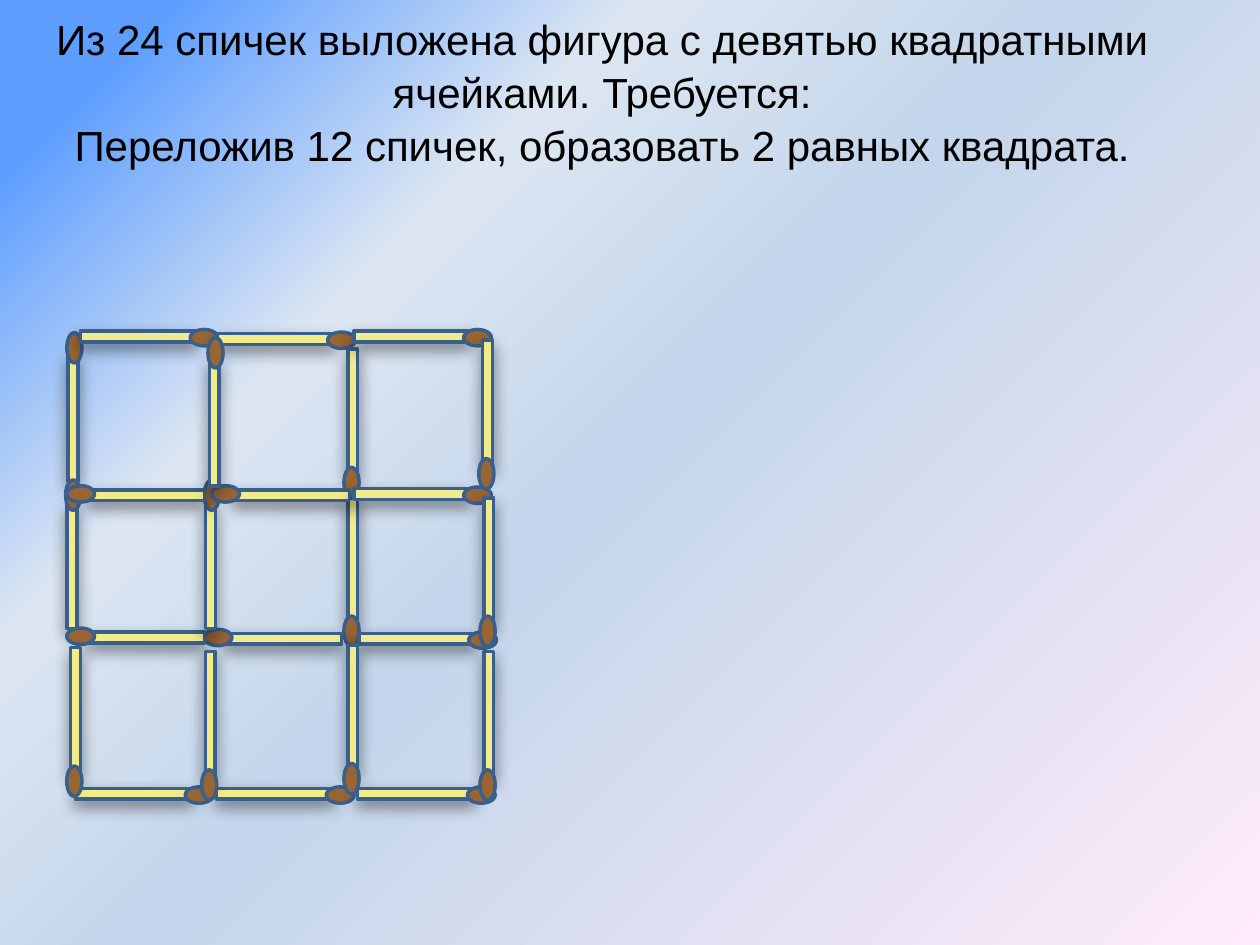
from typing import NamedTuple

from lxml import etree
from pptx import Presentation
from pptx import util as u
from pptx.dml.color import RGBColor
from pptx.enum import shapes, text
from pptx.oxml import parse_xml
from pptx.oxml.ns import nsdecls, qn

WOOD = RGBColor(0xF1, 0xEC, 0x8B)
HEAD = RGBColor(0x99, 0x66, 0x33)
OUTLINE = RGBColor(0x3A, 0x5F, 0x8C)
BLACK = RGBColor(0, 0, 0)
BACKDROP = [
    (8, RGBColor(0x5E, 0x9E, 0xFF)),
    (29, RGBColor(0xDC, 0xE6, 0xF2)),
    (49, RGBColor(0xC4, 0xD6, 0xEB)),
    (100, RGBColor(0xFF, 0xEB, 0xFA)),
]


class Match(NamedTuple):
    """Centre of the stick, in inches, and where the head points."""
    x: float
    y: float
    turn: int


class Style(NamedTuple):
    """Sizes of stick and head, and the head's offset from the stick's centre."""
    stick: tuple[float, float]
    head: tuple[float, float]
    offset: tuple[float, float]


LEFT, UP, RIGHT, DOWN = 0, 90, 180, 270
FLAT_STICK, FLAT_HEAD = (1.26, 0.36), (0.22, 0.13)
TALL_STICK, TALL_HEAD = (1.36, 0.33), (0.24, 0.12)
STYLES = {
    LEFT: Style(FLAT_STICK, FLAT_HEAD, (-0.52, -0.01)),
    UP: Style(TALL_STICK, TALL_HEAD, (0.01, -0.56)),
    RIGHT: Style(FLAT_STICK, FLAT_HEAD, (0.52, 0.01)),
    DOWN: Style(TALL_STICK, TALL_HEAD, (-0.01, 0.56)),
}

# Hand-laid matches, from back to front
MATCHES = [
    Match(0.58, 3.32, UP), Match(1.10, 2.67, RIGHT), Match(0.57, 4.49, UP),
    Match(2.19, 2.69, RIGHT), Match(2.80, 3.27, DOWN), Match(2.80, 4.45, DOWN),
    Match(2.25, 5.07, LEFT), Match(1.16, 5.06, LEFT), Match(1.67, 4.49, UP),
    Match(1.16, 3.93, LEFT), Match(2.31, 3.93, LEFT), Match(1.70, 3.36, UP),
    Match(3.27, 2.67, RIGHT), Match(3.27, 3.92, RIGHT), Match(3.31, 5.07, RIGHT),
    Match(1.06, 6.30, RIGHT), Match(2.18, 6.30, RIGHT), Match(3.30, 6.30, RIGHT),
    Match(3.88, 5.67, DOWN), Match(2.80, 5.62, DOWN), Match(1.67, 5.67, DOWN),
    Match(0.60, 5.64, DOWN), Match(3.87, 3.20, DOWN), Match(3.88, 4.45, DOWN),
]


def paint_background(page) -> None:
    """Fill the page with a diagonal gradient of several stops."""
    fill = page.background.fill
    fill.gradient()
    fill.gradient_angle = 315
    stops = page._element.find(".//" + qn("a:gsLst"))
    for stop in list(stops):
        stops.remove(stop)
    for percent, color in BACKDROP:
        stop = etree.SubElement(stops, qn("a:gs"), pos=str(percent * 1000))
        etree.SubElement(stop, qn("a:srgbClr"), val=str(color))


def add_part(group, kind, center: tuple[float, float],
             size: tuple[float, float], turn: int, color: RGBColor):
    """Add one outlined shape, placed by its centre."""
    left, top = (c - s / 2 for c, s in zip(center, size))
    part = group.shapes.add_shape(kind, u.Inches(left), u.Inches(top),
                                  *map(u.Inches, size))
    part.rotation = turn
    part.shadow.inherit = False
    part.fill.solid()
    part.fill.fore_color.rgb = color
    part.line.color.rgb = OUTLINE
    part.line.width = u.Pt(2)
    return part


def cast_shadow(part) -> None:
    """Drop a soft shadow straight down."""
    effects = part._element.spPr.find(qn("a:effectLst"))
    effects.append(parse_xml(
        f'<a:outerShdw {nsdecls("a")} blurRad="{u.Pt(9)}" dist="{u.Pt(4)}" '
        'dir="5400000" algn="ctr" rotWithShape="0"><a:srgbClr val="000000">'
        '<a:alpha val="43000"/></a:srgbClr></a:outerShdw>'))


def add_match(page, match: Match) -> None:
    style = STYLES[match.turn]
    dx, dy = style.offset
    group = page.shapes.add_group_shape()
    stick = add_part(group, shapes.MSO_SHAPE.MATH_MINUS, (match.x, match.y),
                     style.stick, match.turn, WOOD)
    cast_shadow(stick)
    add_part(group, shapes.MSO_SHAPE.OVAL, (match.x + dx, match.y + dy),
             style.head, match.turn, HEAD)


def add_title(page, wording: str) -> None:
    box = page.shapes.add_textbox(u.Inches(0.28), u.Inches(0.29),
                                  u.Inches(9), u.Inches(1.25))
    frame = box.text_frame
    frame.word_wrap = True
    frame.vertical_anchor = text.MSO_ANCHOR.MIDDLE
    frame.margin_bottom = u.Inches(0.45)
    para = frame.paragraphs[0]
    para.text = wording
    para.alignment = text.PP_ALIGN.CENTER
    para.line_spacing = 1.05
    para.font.name = "Arial"
    para.font.size = u.Pt(24)
    para.font.color.rgb = BLACK


def main() -> None:
    deck = Presentation()
    deck.slide_width, deck.slide_height = u.Inches(10), u.Inches(7.5)
    page = deck.slides.add_slide(deck.slide_layouts[6])
    paint_background(page)

    # Puzzle wording
    add_title(page, "Из 24 спичек выложена фигура с девятью квадратными "
                    "ячейками. Требуется:\v"
                    "Переложив 12 спичек, образовать 2 равных квадрата.")

    # Three by three grid of matches
    for match in MATCHES:
        add_match(page, match)

    deck.save("out.pptx")


if __name__ == "__main__":
    main()
